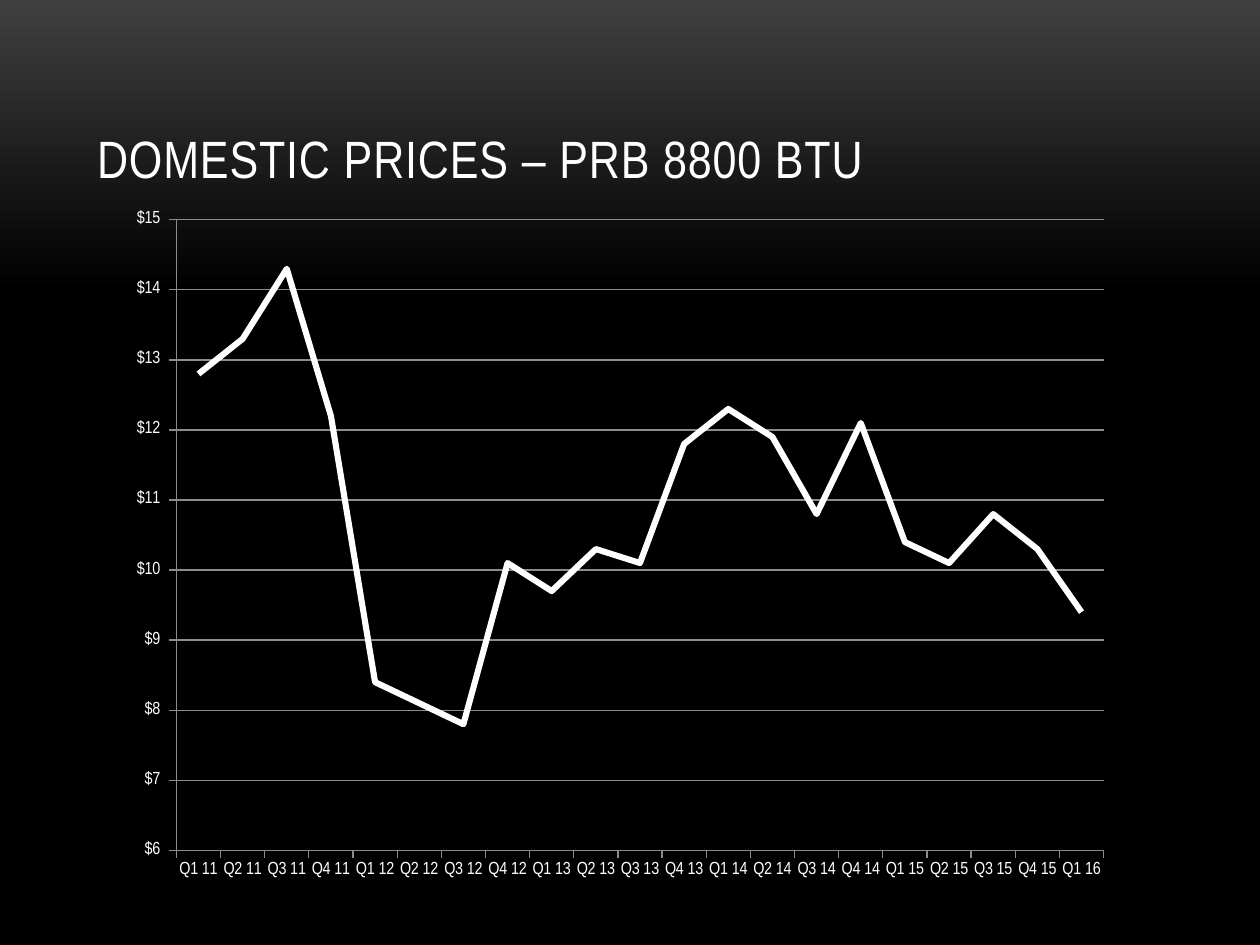
from copy import deepcopy

from lxml import etree
from pptx import Presentation
from pptx.chart.data import CategoryChartData
from pptx.dml.color import RGBColor
from pptx.enum import chart as ch, text as tx
from pptx.oxml.ns import qn
from pptx.util import Inches, Pt

TITLE = "DOMESTIC PRICES – PRB 8800 BTU"
PRICES = [12.8, 13.3, 14.3, 12.2, 8.4, 8.1, 7.8, 10.1, 9.7, 10.3, 10.1,
          11.8, 12.3, 11.9, 10.8, 12.1, 10.4, 10.1, 10.8, 10.3, 9.4]
QUARTERS = [f"Q{i % 4 + 1} {11 + i // 4}" for i in range(len(PRICES))]
PLOT = {"x": 0.06, "y": 0.03, "w": 0.92, "h": 0.91}

FONT = "Arial Narrow"
WHITE = RGBColor(0xFF, 0xFF, 0xFF)
BLACK = RGBColor(0, 0, 0)
GREY = RGBColor(0x3F, 0x3F, 0x3F)
RULE = RGBColor(0x8C, 0x8C, 0x8C)


def style(font, size):
    font.name = FONT
    font.size = Pt(size)
    font.bold = False
    font.color.rgb = WHITE


def paint(slide):
    fill = slide.background.fill
    fill.gradient()
    fill.gradient_angle = 270
    first, last = fill.gradient_stops
    first.color.rgb, first.position = GREY, 0
    last.color.rgb, last.position = BLACK, 1
    stops = slide.background._cSld.find(".//" + qn("a:gsLst"))
    mid = deepcopy(stops[-1])
    mid.set("pos", "31000")
    stops.insert(1, mid)


def head(slide):
    box = slide.shapes.title
    box.left, box.top = Inches(0.67), Inches(0.3)
    box.width, box.height = Inches(8.67), Inches(1.25)
    frame = box.text_frame
    frame.auto_size = tx.MSO_AUTO_SIZE.NONE
    frame.word_wrap = True
    frame.vertical_anchor = tx.MSO_ANCHOR.BOTTOM
    para = frame.paragraphs[0]
    para.alignment = tx.PP_ALIGN.LEFT
    run = para.add_run()
    run.text = TITLE
    style(run.font, 30)
    run.font._element.set("spc", "50")


def place(chart):
    area = chart._chartSpace.find(".//" + qn("c:plotArea"))
    old = area.find(qn("c:layout"))
    if old is not None:
        area.remove(old)
    layout = etree.Element(qn("c:layout"))
    area.insert(0, layout)
    manual = etree.SubElement(layout, qn("c:manualLayout"))
    parts = {"layoutTarget": "inner", "xMode": "edge", "yMode": "edge", **PLOT}
    for name, val in parts.items():
        etree.SubElement(manual, qn("c:" + name)).set("val", str(val))


def graph(slide):
    data = CategoryChartData()
    data.categories = QUARTERS
    data.add_series("Series 1", PRICES)
    chart = slide.shapes.add_chart(
        ch.XL_CHART_TYPE.LINE, Inches(0.92), Inches(1.58),
        Inches(8), Inches(5.5), data).chart
    chart.has_title = False
    chart.has_legend = False
    style(chart.font, 10)
    place(chart)

    plot = chart.plots[0]
    plot.vary_by_categories = False
    line = plot.series[0]
    line.smooth = False
    line.marker.style = ch.XL_MARKER_STYLE.NONE
    line.format.line.color.rgb = WHITE
    line.format.line.width = Pt(3.5)

    cat, val = chart.category_axis, chart.value_axis
    for axis in (cat, val):
        axis.major_tick_mark = ch.XL_TICK_MARK.OUTSIDE
        axis.minor_tick_mark = ch.XL_TICK_MARK.NONE
        axis.format.line.color.rgb = RULE
        axis.format.line.width = Pt(0.75)
    val.minimum_scale, val.maximum_scale, val.major_unit = 6, 15, 1
    val.has_major_gridlines = True
    val.major_gridlines.format.line.color.rgb = RULE
    val.major_gridlines.format.line.width = Pt(0.75)
    val.tick_labels.number_format = '"$"#,##0_)'
    val.tick_labels.number_format_is_linked = False


def main():
    deck = Presentation()
    deck.slide_width, deck.slide_height = Inches(10), Inches(7.5)
    slide = deck.slides.add_slide(deck.slide_layouts[5])
    paint(slide)
    head(slide)
    graph(slide)
    deck.save("out.pptx")


if __name__ == "__main__":
    main()
